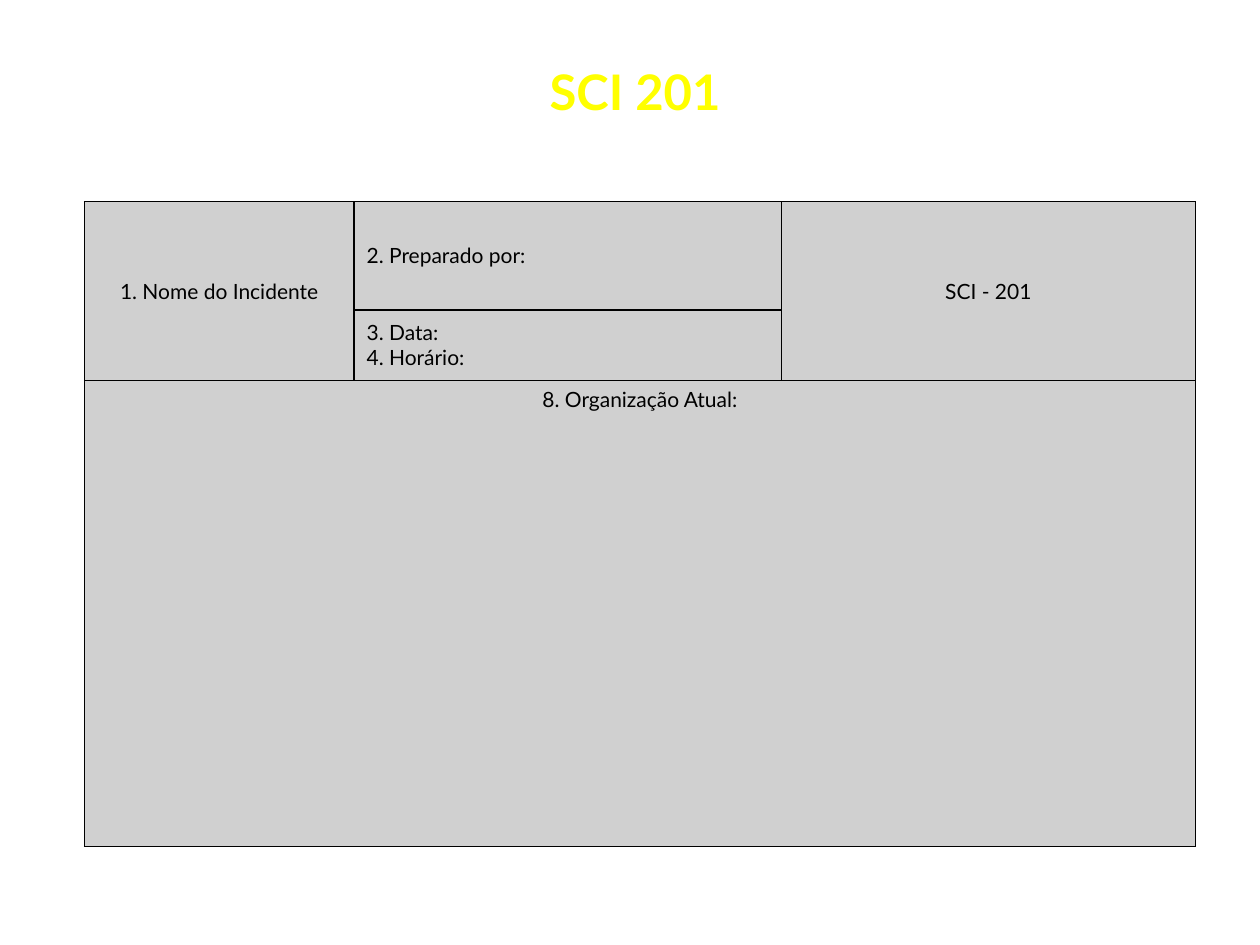
from dataclasses import dataclass

from lxml.etree import SubElement
from pptx import Presentation
from pptx.dml.color import RGBColor
from pptx.enum.text import MSO_ANCHOR, MSO_AUTO_SIZE, PP_ALIGN
from pptx.oxml.ns import qn
from pptx.table import Table, _Cell as Cell
from pptx.text.text import TextFrame
from pptx.util import Inches, Pt


@dataclass(frozen=True)
class Theme:
    font: str = "Lato"
    title: str = "FFFF00"
    text: str = "000000"
    fill: str = "D0D0D0"
    border: str = "000000"
    title_size: float = 28
    text_size: float = 12
    border_width: float = 0.75


@dataclass(frozen=True)
class Field:
    row: int
    col: int
    text: str
    rows: int = 1
    cols: int = 1
    align: PP_ALIGN = PP_ALIGN.LEFT
    anchor: MSO_ANCHOR = MSO_ANCHOR.MIDDLE


THEME = Theme()
COLUMNS = (2.14, 3.39, 3.29)
ROWS = (0.86, 0.56, 3.7)
FIELDS = (
    Field(0, 0, "1. Nome do Incidente", rows=2, align=PP_ALIGN.CENTER),
    Field(0, 1, "2. Preparado por:"),
    Field(0, 2, "SCI - 201", rows=2, align=PP_ALIGN.CENTER),
    Field(1, 1, "3. Data:\n4. Horário:"),
    Field(2, 0, "8. Organização Atual:", cols=3,
          align=PP_ALIGN.CENTER, anchor=MSO_ANCHOR.TOP),
)


def write(tf: TextFrame, text: str, size: float, color: str,
          align: PP_ALIGN, bold: bool = False) -> None:
    tf.text = text
    for p in tf.paragraphs:
        p.alignment = align
        for r in p.runs:
            r.font.name = THEME.font
            r.font.size = Pt(size)
            r.font.bold = bold
            r.font.color.rgb = RGBColor.from_string(color)


def style_cell(cell: Cell) -> None:
    """Give the cell four borders and the form's background."""
    tc_pr = cell._tc.get_or_add_tcPr()
    for side in ("a:lnL", "a:lnR", "a:lnT", "a:lnB"):
        ln = SubElement(tc_pr, qn(side), w=str(Pt(THEME.border_width)))
        fill = SubElement(ln, qn("a:solidFill"))
        SubElement(fill, qn("a:srgbClr"), val=THEME.border)
    cell.fill.solid()
    cell.fill.fore_color.rgb = RGBColor.from_string(THEME.fill)


def fill_field(table: Table, field: Field) -> None:
    cell = table.cell(field.row, field.col)
    if field.rows > 1 or field.cols > 1:
        cell.merge(table.cell(field.row + field.rows - 1,
                              field.col + field.cols - 1))
    cell.vertical_anchor = field.anchor
    write(cell.text_frame, field.text, THEME.text_size, THEME.text, field.align)


def main() -> None:
    prs = Presentation()
    prs.slide_width, prs.slide_height = Inches(10), Inches(7.5)
    s = prs.slides.add_slide(prs.slide_layouts[5])

    title = s.shapes.title
    title.left, title.top = Inches(1.93), Inches(0.44)
    title.width, title.height = Inches(6.22), Inches(0.57)
    tf = title.text_frame
    tf.word_wrap = True
    tf.auto_size = MSO_AUTO_SIZE.SHAPE_TO_FIT_TEXT
    tf.vertical_anchor = MSO_ANCHOR.TOP
    write(tf, "SCI 201", THEME.title_size, THEME.title, PP_ALIGN.CENTER, bold=True)

    table = s.shapes.add_table(
        len(ROWS), len(COLUMNS), Inches(0.67), Inches(1.6),
        Inches(sum(COLUMNS)), Inches(sum(ROWS))).table
    table.first_row = table.horz_banding = False
    for column, width in zip(table.columns, COLUMNS):
        column.width = Inches(width)
    for row, height in zip(table.rows, ROWS):
        row.height = Inches(height)
    for cell in table.iter_cells():
        style_cell(cell)
    for field in FIELDS:
        fill_field(table, field)

    prs.save("out.pptx")


if __name__ == "__main__":
    main()
